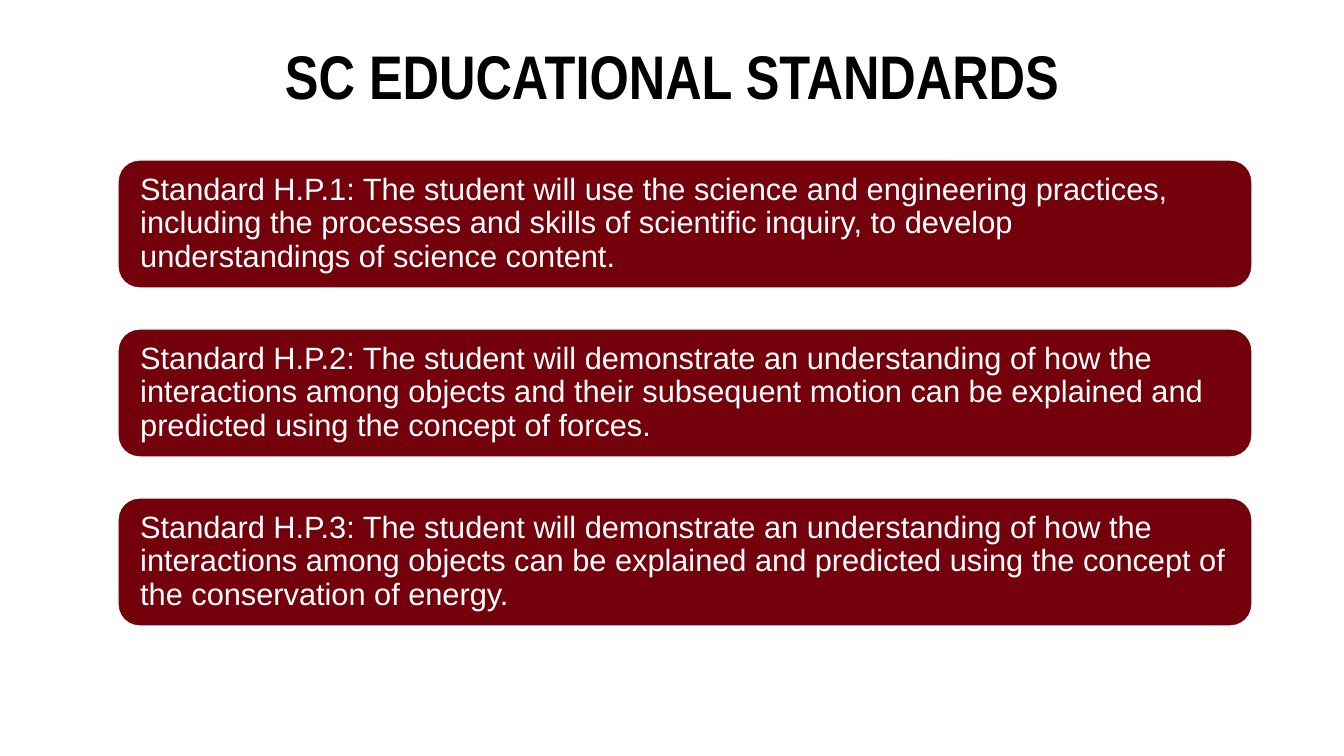
from pptx import Presentation
from pptx.dml.color import RGBColor
from pptx.enum.shapes import MSO_SHAPE
from pptx.enum.text import MSO_ANCHOR, MSO_AUTO_SIZE, PP_ALIGN
from pptx.util import Emu, Pt

BLACK = RGBColor(0x00, 0x00, 0x00)
WHITE = RGBColor(0xFF, 0xFF, 0xFF)
GARNET = RGBColor(0x73, 0x00, 0x0A)

STANDARDS = [
    "Standard H.P.1: The student will use the science and engineering practices, "
    "including the processes and skills of scientific inquiry, to develop "
    "understandings of science content.",
    "Standard H.P.2: The student will demonstrate an understanding of how the "
    "interactions among objects and their subsequent motion can be explained and "
    "predicted using the concept of forces.",
    "Standard H.P.3: The student will demonstrate an understanding of how the "
    "interactions among objects can be explained and predicted using the concept of "
    "the conservation of energy.",
]
FIRST_TOP = 160
PITCH = 169


def px(length):
    return Emu(round(length * 914400 / 100.8))


class StandardsSlide:
    heading_font = "Arial Narrow"
    body_font = "Arial"

    def __init__(self, presentation):
        self.slide = presentation.slides.add_slide(presentation.slide_layouts[5])

    def set_text(self, frame, text, font, size, color, align, inset, bold=False):
        frame.text = text
        frame.word_wrap = True
        frame.auto_size = MSO_AUTO_SIZE.NONE
        frame.vertical_anchor = MSO_ANCHOR.MIDDLE
        frame.margin_left = frame.margin_right = px(inset)
        paragraph = frame.paragraphs[0]
        paragraph.alignment = align
        paragraph.line_spacing = 0.9
        paragraph.font.name = font
        paragraph.font.size = Pt(size)
        paragraph.font.bold = bold
        paragraph.font.color.rgb = color

    def heading(self, text, left, top, width, height):
        title = self.slide.shapes.title
        title.left, title.top = px(left), px(top)
        title.width, title.height = px(width), px(height)
        self.set_text(title.text_frame, text, self.heading_font, 44, BLACK,
                      PP_ALIGN.CENTER, 10, bold=True)

    def panel(self, text, left, top, width, height):
        panel = self.slide.shapes.add_shape(
            MSO_SHAPE.ROUNDED_RECTANGLE, px(left), px(top), px(width), px(height))
        panel.shadow.inherit = False
        panel.fill.solid()
        panel.fill.fore_color.rgb = GARNET
        panel.line.color.rgb = WHITE
        panel.line.width = Pt(1)
        self.set_text(panel.text_frame, text, self.body_font, 22, WHITE,
                      PP_ALIGN.LEFT, 16)


def main():
    presentation = Presentation()
    presentation.slide_width = px(1344)
    presentation.slide_height = px(756)
    slide = StandardsSlide(presentation)
    slide.heading("SC EDUCATIONAL STANDARDS", 244, 17, 857, 126)
    for row, standard in enumerate(STANDARDS):
        slide.panel(standard, 118, FIRST_TOP + row * PITCH, 1134, 128)
    presentation.save("out.pptx")


if __name__ == "__main__":
    main()
